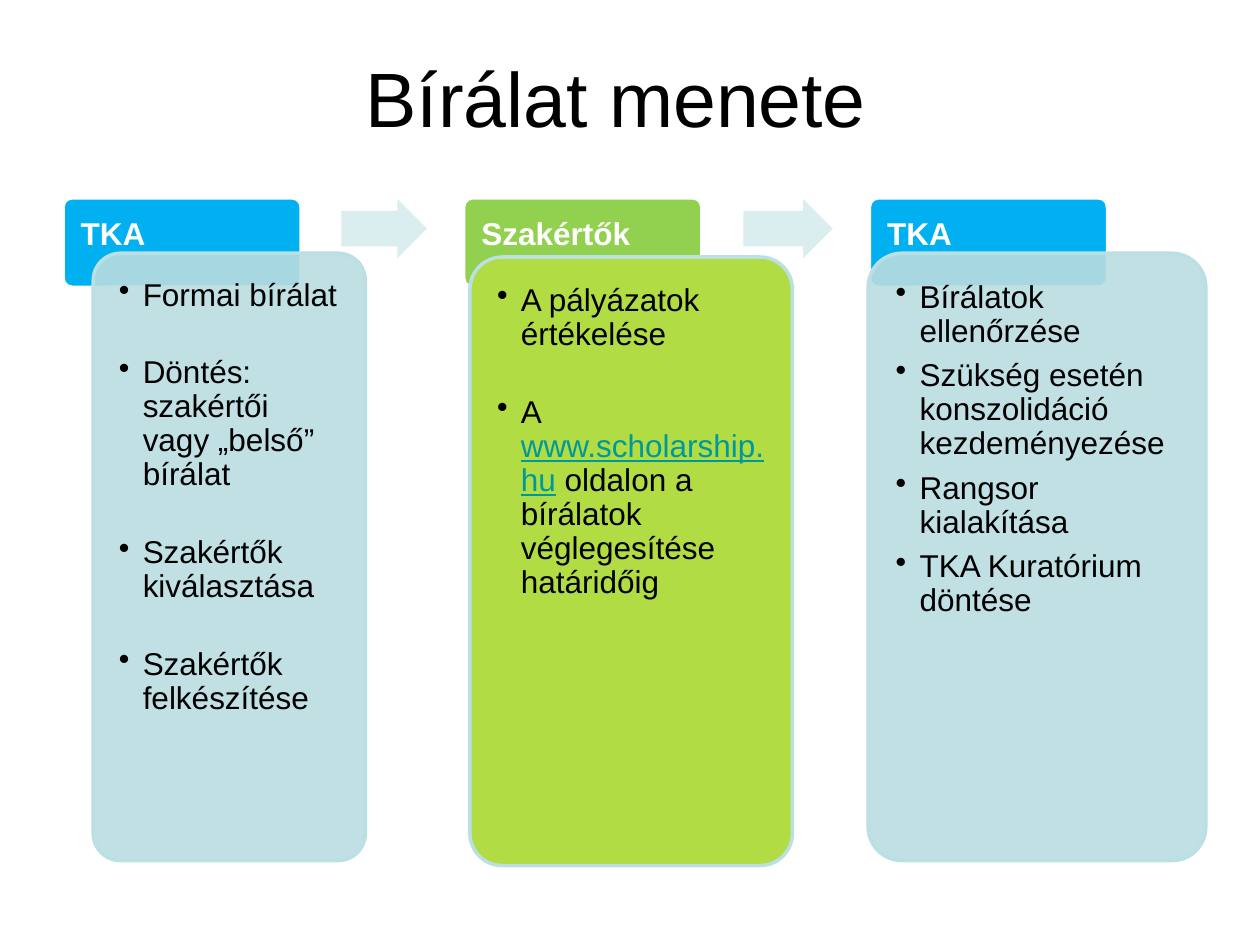
from lxml.etree import SubElement
from pptx import Presentation
from pptx.dml.color import RGBColor
from pptx.enum.shapes import MSO_SHAPE as Preset
from pptx.enum.text import MSO_ANCHOR as Anchor, PP_ALIGN as Align
from pptx.oxml.ns import qn
from pptx.util import Inches, Pt

COLORS = {
    "text": "000000", "white": "FFFFFF", "link": "009999",
    "blue": "00B0F0", "green": "92D050",
    "pale": "BADDE1", "lime": "B1DC44", "edge": "BBE0E3", "arrow": "DAEDEF",
}
FONT = "Arial"
TAB_TOP, TAB_WIDTH, TAB_HEIGHT = 1.57, 1.89, 0.71
ARROW_TOP, ARROW_HEIGHT = 1.58, 0.47
PADDING, BULLET_INDENT = 0.14, 0.19

# A bullet is a list of (text, colour) parts; card is left, top, width, height.
STAGES = [
    {"heading": "TKA", "left": 0.5, "tab": "blue",
     "card": (0.74, 2.01, 2.16, 4.82), "fill": "pale", "opacity": 90, "gap": 25,
     "bullets": [[("Formai bírálat", "text")],
                 [("Döntés: szakértői vagy „belső” bírálat", "text")],
                 [("Szakértők kiválasztása", "text")],
                 [("Szakértők felkészítése", "text")]]},
    {"heading": "Szakértők", "left": 3.68, "tab": "green",
     "card": (3.73, 2.04, 2.56, 4.83), "fill": "lime", "opacity": 100, "gap": 25,
     "bullets": [[("A pályázatok értékelése", "text")],
                 [("A ", "text"), ("www.scholarship.hu", "link"),
                  (" oldalon a bírálatok véglegesítése határidőig", "text")]]},
    {"heading": "TKA", "left": 6.9, "tab": "blue",
     "card": (6.89, 2.01, 2.68, 4.82), "fill": "pale", "opacity": 90, "gap": 6,
     "bullets": [[("Bírálatok ellenőrzése", "text")],
                 [("Szükség esetén konszolidáció kezdeményezése", "text")],
                 [("Rangsor kialakítása", "text")],
                 [("TKA Kuratórium döntése", "text")]]},
]
ARROWS = [(2.71, 0.68), (5.9, 0.71)]


def rgb(name):
    return RGBColor.from_string(COLORS[name])


def add_run(paragraph, text, color, **formats):
    run = paragraph.add_run()
    run.text = text
    for key, value in {"name": FONT, "size": Pt(18), **formats}.items():
        setattr(run.font, key, value)
    run.font.color.rgb = rgb(color)


def add_block(slide, preset, box, fill, edge=None, adjustments=(0.1,)):
    block = slide.shapes.add_shape(preset, *map(Inches, box))
    block.shadow.inherit = False
    for index, value in enumerate(adjustments):
        block.adjustments[index] = value
    block.fill.solid()
    block.fill.fore_color.rgb = rgb(fill)
    if edge:
        block.line.color.rgb = rgb(edge)
        block.line.width = Pt(2)
    else:
        block.line.fill.background()
    return block


def top_left_frame(block):
    frame = block.text_frame
    formats = {"word_wrap": True, "vertical_anchor": Anchor.TOP}
    for side in ("left", "top", "right", "bottom"):
        formats[f"margin_{side}"] = Inches(PADDING)
    for key, value in formats.items():
        setattr(frame, key, value)
    return frame


def set_opacity(block, percent):
    color = block.fill._xPr.find(qn("a:solidFill"))[0]
    SubElement(color, qn("a:alpha")).set("val", str(percent * 1000))


def add_bullet_mark(paragraph):
    properties = paragraph._p.get_or_add_pPr()
    properties.set("marL", str(Inches(BULLET_INDENT)))
    properties.set("indent", str(-Inches(BULLET_INDENT)))
    SubElement(properties, qn("a:buChar")).set("char", "•")


def add_title(slide, text):
    title = slide.shapes.title
    title.left, title.top, title.width, title.height = map(
        Inches, (0.28, 0.3, 9.22, 0.93))
    title.text_frame.vertical_anchor = Anchor.MIDDLE
    paragraph = title.text_frame.paragraphs[0]
    paragraph.alignment = Align.CENTER
    add_run(paragraph, text, "text", size=Pt(44))


def add_tab(slide, stage):
    box = (stage["left"], TAB_TOP, TAB_WIDTH, TAB_HEIGHT)
    tab = add_block(slide, Preset.ROUNDED_RECTANGLE, box, stage["tab"], "white")
    frame = top_left_frame(tab)
    frame.margin_left = Inches(0.12)
    paragraph = frame.paragraphs[0]
    paragraph.alignment = Align.LEFT
    paragraph.line_spacing = 0.9
    add_run(paragraph, stage["heading"], "white", bold=True)


def add_card(slide, stage):
    card = add_block(slide, Preset.ROUNDED_RECTANGLE, stage["card"],
                     stage["fill"], "edge")
    if stage["opacity"] < 100:
        set_opacity(card, stage["opacity"])
    frame = top_left_frame(card)
    for index, parts in enumerate(stage["bullets"]):
        paragraph = frame.add_paragraph() if index else frame.paragraphs[0]
        add_bullet_mark(paragraph)
        paragraph.alignment = Align.LEFT
        paragraph.line_spacing = 0.9
        paragraph.space_after = Pt(stage["gap"])
        for text, color in parts:
            add_run(paragraph, text, color, underline=color == "link")


def main():
    deck = Presentation()
    deck.slide_width, deck.slide_height = Inches(10), Inches(7.5)
    slide = deck.slides.add_slide(deck.slide_layouts[5])
    add_title(slide, "Bírálat menete")
    for stage in STAGES:
        add_tab(slide, stage)
        add_card(slide, stage)
    for left, width in ARROWS:
        add_block(slide, Preset.RIGHT_ARROW,
                  (left, ARROW_TOP, width, ARROW_HEIGHT), "arrow",
                  adjustments=(0.6, 0.5))
    deck.save("out.pptx")


if __name__ == "__main__":
    main()
